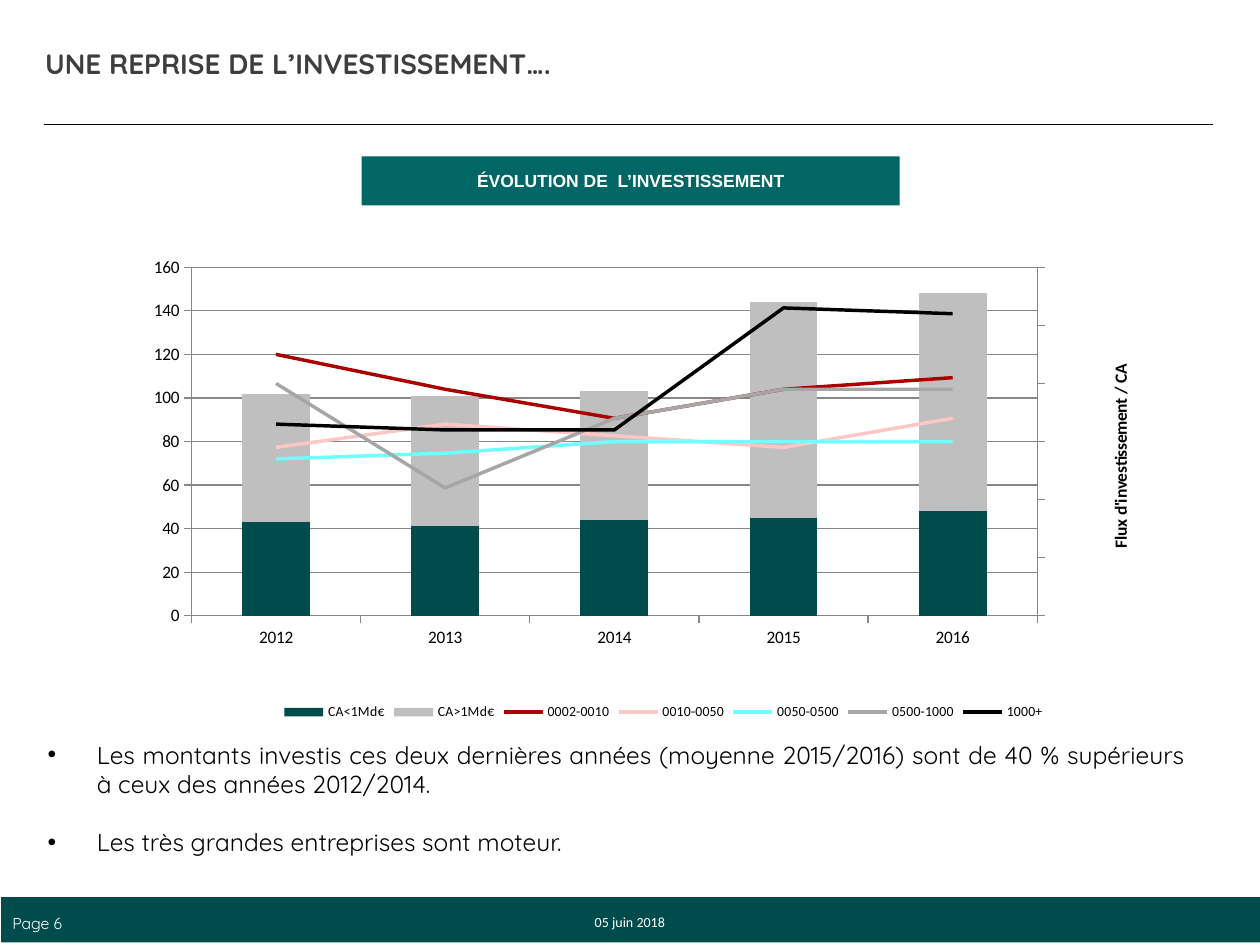
"""Build the slide on investment trends: combined chart, banner and comments."""
from copy import deepcopy

from lxml import etree
from pptx import Presentation
from pptx.chart import axis as axes
from pptx.chart.data import CategoryChartData
from pptx.dml.color import RGBColor
from pptx.enum import chart as kinds, shapes, text
from pptx.oxml import ns, parse_xml
from pptx.util import Inches, Pt

TITLE = "UNE REPRISE DE L’INVESTISSEMENT…."
BANNER = "ÉVOLUTION DE  L’INVESTISSEMENT"
COMMENTS = [
    "Les montants investis ces deux dernières années (moyenne 2015/2016) "
    "sont de 40 % supérieurs à ceux des années 2012/2014.",
    "Les très grandes entreprises sont moteur.",
]
YEARS = ["2012", "2013", "2014", "2015", "2016"]
BARS = [
    ("CA<1Md€", "004C4C", [43, 41, 44, 45, 48]),
    ("CA>1Md€", "BFBFBF", [59, 60, 59, 99, 100]),
]
LINES = [
    ("0002-0010", "AA0000", [0.045, 0.039, 0.034, 0.039, 0.041]),
    ("0010-0050", "FFC6C6", [0.029, 0.033, 0.031, 0.029, 0.034]),
    ("0050-0500", "70FFFF", [0.027, 0.028, 0.03, 0.03, 0.03]),
    ("0500-1000", "A6A6A6", [0.04, 0.022, 0.034, 0.039, 0.039]),
    ("1000+", "000000", [0.033, 0.032, 0.032, 0.053, 0.052]),
]
ALIGN = text.PP_ALIGN
MIDDLE = text.MSO_ANCHOR.MIDDLE


def rgb(value):
    return RGBColor.from_string(value)


def set_font(font, size, name, color, bold=False):
    font.size, font.name, font.bold = Pt(size), name, bold
    font.color.rgb = rgb(color)


def write(shape, words, size, name, color, bold=False, align=ALIGN.LEFT, anchor=text.MSO_ANCHOR.TOP):
    frame = shape.text_frame
    frame.word_wrap, frame.vertical_anchor = True, anchor
    para = frame.paragraphs[0]
    para.text, para.alignment = words, align
    set_font(para.font, size, name, color, bold)
    return para


def add_text(page, place, *args, **options):
    box = page.shapes.add_textbox(*map(Inches, place))
    return write(box, *args, **options)


def add_bar(page, place, color):
    bar = page.shapes.add_shape(shapes.MSO_SHAPE.RECTANGLE, *map(Inches, place))
    bar.shadow.inherit = False
    bar.fill.solid()
    bar.fill.fore_color.rgb = rgb(color)
    bar.line.fill.background()
    return bar


def add_rule(page, left, right, top):
    rule = page.shapes.add_connector(
        shapes.MSO_CONNECTOR.STRAIGHT, *map(Inches, (left, top, right, top)))
    rule.line.color.rgb, rule.line.width = rgb("000000"), Pt(0.75)
    etree.SubElement(rule._element.spPr, ns.qn("a:effectLst"))


def add_comments(page, place):
    frame = page.shapes.add_textbox(*map(Inches, place)).text_frame
    frame.word_wrap = True
    for index, words in enumerate(COMMENTS):
        para = frame.add_paragraph() if index else frame.paragraphs[0]
        para.text, para.alignment = words, ALIGN.JUSTIFY
        if index:
            para.space_before = Pt(16.5)
        props = para._p.get_or_add_pPr()
        props.set("marL", str(Inches(0.39)))
        props.set("indent", str(-Inches(0.39)))
        etree.SubElement(props, ns.qn("a:buFont")).set("typeface", "Arial")
        etree.SubElement(props, ns.qn("a:buChar")).set("char", "•")
        set_font(para.font, 14, "Quicksand", "000000")


def set_layout(parent, position, **values):
    for old in parent.findall(ns.qn("c:layout")):
        parent.remove(old)
    tags = "".join(f'<c:{key} val="{value}"/>' for key, value in values.items())
    parent.insert(position, parse_xml(
        f'<c:layout {ns.nsdecls("c")}><c:manualLayout>{tags}</c:manualLayout></c:layout>'))


def style_axis(axis, tick):
    axis.major_tick_mark, axis.has_major_gridlines = tick, False
    axis.format.line.color.rgb = rgb("868686")
    axis.format.line.width = Pt(0.75)
    set_font(axis.tick_labels.font, 10, "Calibri", "000000")


def style_value_axis(axis, title, top, step, fmt, tick, x, y):
    style_axis(axis, tick)
    axis.minimum_scale, axis.maximum_scale, axis.major_unit = 0, top, step
    axis.tick_labels.number_format = fmt
    axis.tick_labels.number_format_is_linked = False
    frame = axis.axis_title.text_frame
    frame.text = title
    frame._txBody.bodyPr.set("rot", "-5400000")
    frame._txBody.bodyPr.set("vert", "horz")
    set_font(frame.paragraphs[0].font, 10, "Calibri", "000000", True)
    set_layout(axis.axis_title._element, 1, xMode="edge", yMode="edge", x=x, y=y)


def move_to_right_axis(chart):
    area = chart._chartSpace.chart.plotArea
    columns = area.find(ns.qn("c:barChart"))
    lines = parse_xml(
        f'<c:lineChart {ns.nsdecls("c")}><c:grouping val="standard"/><c:varyColors val="0"/>'
        '<c:marker val="1"/><c:axId val="50010"/><c:axId val="50020"/></c:lineChart>')
    end = lines.find(ns.qn("c:marker"))
    for series in columns.findall(ns.qn("c:ser"))[len(BARS):]:
        for flag in series.findall(ns.qn("c:invertIfNegative")):
            series.remove(flag)
        end.addprevious(series)
    columns.addnext(lines)
    base, left = area.find(ns.qn("c:catAx")), area.find(ns.qn("c:valAx"))
    right, hidden = deepcopy(left), deepcopy(base)
    left.addnext(right)
    right.addnext(hidden)
    for element, own, other in ((right, "50020", "50010"), (hidden, "50010", "50020")):
        element.find(ns.qn("c:axId")).set("val", own)
        element.find(ns.qn("c:crossAx")).set("val", other)
    right.find(ns.qn("c:axPos")).set("val", "r")
    right.find(ns.qn("c:crosses")).set("val", "max")
    axes.CategoryAxis(hidden).visible = False
    return axes.ValueAxis(right)


def add_investment_chart(page, place):
    data = CategoryChartData()
    data.categories = YEARS
    for name, color, values in BARS + LINES:
        data.add_series(name, values)
    chart = page.shapes.add_chart(
        kinds.XL_CHART_TYPE.COLUMN_STACKED, *map(Inches, place), data).chart
    chart.has_title = False
    set_font(chart.font, 10, "Calibri", "000000")
    right = move_to_right_axis(chart)
    columns, lines = chart.plots
    columns.gap_width, columns.overlap, columns.vary_by_categories = 150, 100, False
    for series, (name, color, values) in zip(columns.series, BARS):
        series.format.fill.solid()
        series.format.fill.fore_color.rgb = rgb(color)
    for series, (name, color, values) in zip(lines.series, LINES):
        series.smooth = False
        series.marker.style = kinds.XL_MARKER_STYLE.NONE
        series.format.line.color.rgb, series.format.line.width = rgb(color), Pt(2)
    tick = kinds.XL_TICK_MARK
    style_axis(chart.category_axis, tick.OUTSIDE)
    style_value_axis(chart.value_axis, "(M€)", 165, 20, "#,##0", tick.NONE, 0.01, 0.39)
    chart.value_axis.tick_label_position = kinds.XL_TICK_LABEL_POSITION.NONE
    style_value_axis(right, "Flux d'investissement / CA", 0.06, 0.01, "0%", tick.OUTSIDE, 0.95, 0.23)
    set_layout(chart._chartSpace.chart.plotArea, 0, layoutTarget="inner", xMode="edge",
               yMode="edge", x=0.02, y=0.04, w=0.86, h=0.73)
    chart.has_legend = True
    chart.legend.position = kinds.XL_LEGEND_POSITION.BOTTOM
    chart.legend.include_in_layout = False
    set_font(chart.legend.font, 8, "Calibri", "000000")


def main():
    deck = Presentation()
    deck.slide_width, deck.slide_height = Inches(10), Inches(7.5)
    page = deck.slides.add_slide(deck.slide_layouts[6])
    add_bar(page, (0.01, 7.12, 10, 0.36), "004C4C")
    add_text(page, (0, 7.17, 10, 0.31), "Page 6", 9, "Quicksand", "FFFFFF", anchor=MIDDLE)
    add_rule(page, 0.35, 9.63, 0.99)
    add_text(page, (4.35, 7.2, 1.3, 0.24), "05 juin 2018", 8, "Calibri", "FFFFFF", align=ALIGN.CENTER)
    banner = add_bar(page, (2.87, 1.24, 4.27, 0.39), "006666")
    write(banner, BANNER, 10, "Arial", "FFFFFF", True, ALIGN.CENTER, MIDDLE)
    add_comments(page, (0.28, 5.82, 9.23, 0.92))
    title = add_text(page, (0.26, 0.38, 9.11, 0.5), TITLE, 16, "Quicksand", "3E3E3E", bold=True)
    title.line_spacing = 0.75
    add_investment_chart(page, (1.22, 1.97, 7.95, 3.79))
    deck.save("out.pptx")


if __name__ == "__main__":
    main()
